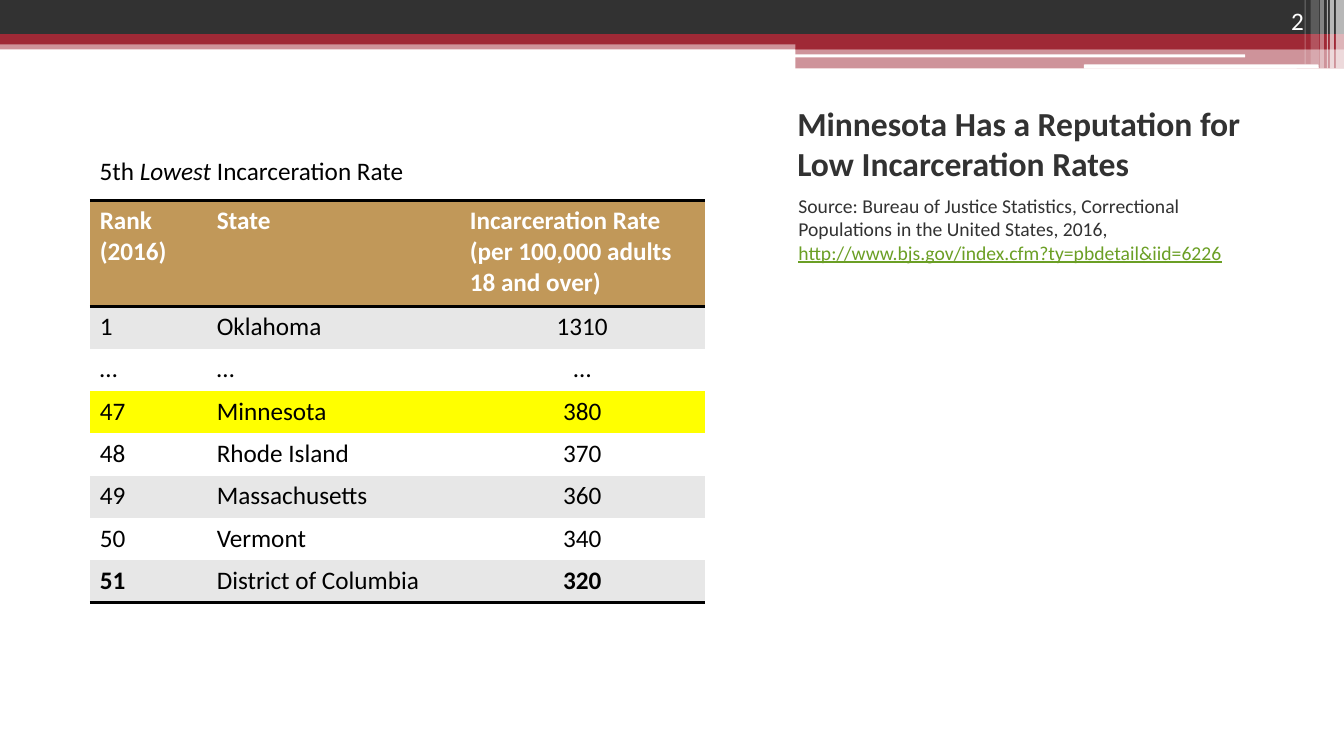
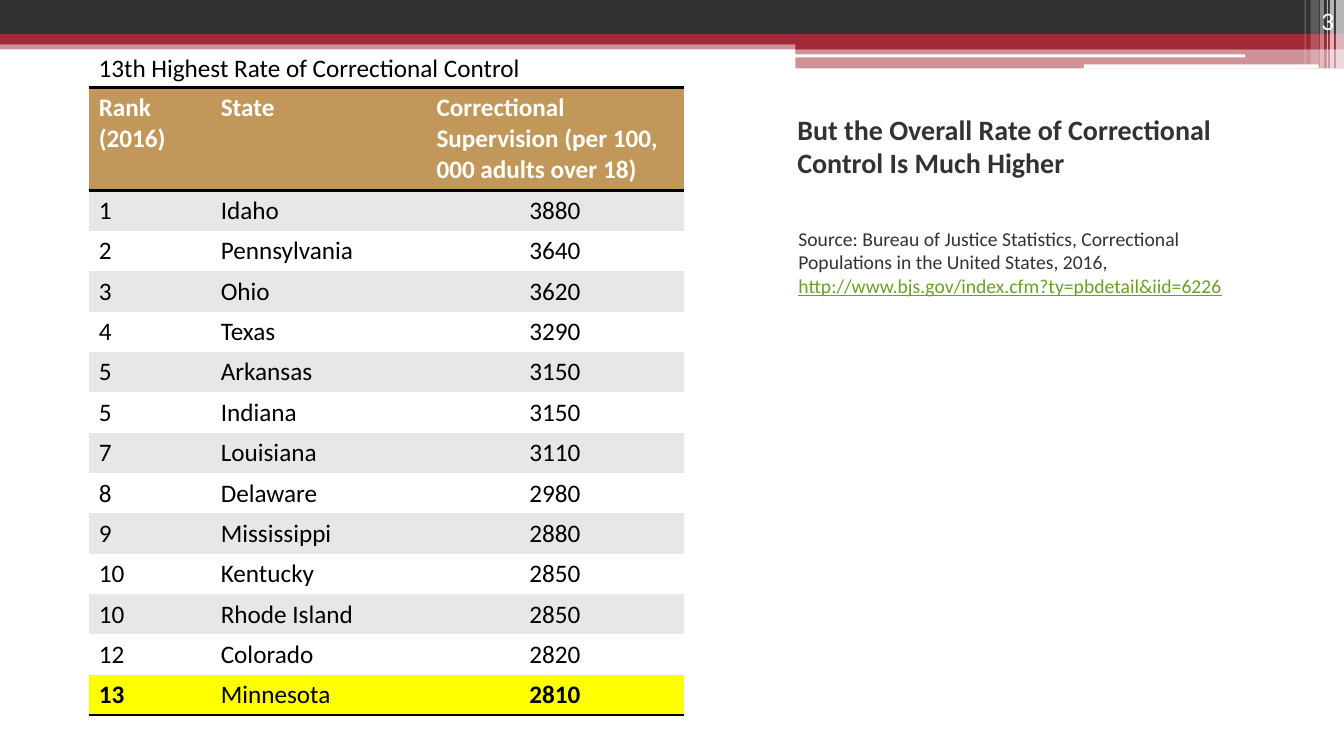
from dataclasses import dataclass

from lxml import etree
from pptx import Presentation
from pptx.dml.color import RGBColor
from pptx.enum import shapes, text
from pptx.oxml import ns
from pptx.util import Inches, Pt


@dataclass(frozen=True)
class Theme:
    font: str = "Calibri"
    dark: str = "323232"
    red: str = "9F2936"
    white: str = "FFFFFF"
    black: str = "000000"
    header: str = "C19859"
    band: str = "E7E7E7"
    highlight: str = "FFFF00"
    link: str = "6B9F25"
    body_size: int = 18
    source_size: int = 14
    rule_width: int = 2


THEME = Theme()
PLAIN_TABLE = "{2D5ABB26-0587-4C30-8999-92F81FD0307C}"
RECT = shapes.MSO_SHAPE.RECTANGLE
ROUND = shapes.MSO_SHAPE.ROUNDED_RECTANGLE
RIGHT = text.PP_ALIGN.RIGHT
BOTTOM = text.MSO_ANCHOR.BOTTOM

# Content: a span is its words and the font settings it changes
SOURCE = [
    ("Source: Bureau of Justice Statistics, Correctional Populations in the United States, 2016, ", {}),
    ("http://www.bjs.gov/index.cfm?ty=pbdetail&iid=6226", {"color": THEME.link, "underline": True}),
]
SLIDES = [
    {
        "number": "2", "number_left": 11.92,
        "title": "Minnesota Has a Reputation for Low Incarceration Rates",
        "title_top": 0.91, "title_size": 24, "source_top": 1.87,
        "caption": [("5th ", {}), ("Lowest", {"italic": True}), (" Incarceration Rate", {})],
        "caption_top": 1.49,
        "table_at": (0.89, 1.99), "columns": (1.16, 2.51, 2.43),
        "header_height": 1.05, "row_height": 0.42,
        "header": ("Rank\n(2016)", "State", "Incarceration Rate (per 100,000 adults 18 and over)"),
        "rows": [
            ("1", "Oklahoma", "1310"),
            ("…", "…", "…"),
            ("47", "Minnesota", "380"),
            ("48", "Rhode Island", "370"),
            ("49", "Massachusetts", "360"),
            ("50", "Vermont", "340"),
            ("51", "District of Columbia", "320"),
        ],
    },
    {
        "number": "3", "number_left": 12.22,
        "title": "But the Overall Rate of Correctional Control Is Much Higher",
        "title_top": 0.87, "title_size": 20, "source_top": 2.2,
        "caption": [("13th Highest Rate of Correctional Control", {})],
        "caption_top": 0.47,
        "table_at": (0.88, 0.87), "columns": (1.21, 2.14, 2.55),
        "header_height": 1.02, "row_height": 0.4,
        "header": ("Rank (2016)", "State", "Correctional Supervision (per 100, 000 adults over 18)"),
        "rows": [
            ("1", "Idaho", "3880"),
            ("2", "Pennsylvania", "3640"),
            ("3", "Ohio", "3620"),
            ("4", "Texas", "3290"),
            ("5", "Arkansas", "3150"),
            ("5", "Indiana", "3150"),
            ("7", "Louisiana", "3110"),
            ("8", "Delaware", "2980"),
            ("9", "Mississippi", "2880"),
            ("10", "Kentucky", "2850"),
            ("10", "Rhode Island", "2850"),
            ("12", "Colorado", "2820"),
            ("13", "Minnesota", "2810"),
        ],
    },
]

# Bands shared by all slides: preset, left, top, width, height, colour, opacity in percent
BANDS = [
    (RECT, 0, 0.4, 13.33, 0.09, THEME.red, 50),
    (RECT, 0, 0, 13.33, 0.34, THEME.dark, 100),
    (RECT, 0, 0.34, 13.33, 0.1, THEME.red, 100),
    (RECT, 7.89, 0.39, 5.44, 0.1, THEME.red, 100),
    (RECT, 7.89, 0.48, 5.44, 0.2, THEME.red, 50),
    (ROUND, 7.88, 0.54, 4.47, 0.03, THEME.white, 100),
    (ROUND, 10.75, 0.64, 2.33, 0.04, THEME.white, 100),
    (RECT, 13.25, 0, 0.08, 0.68, THEME.white, 65),
    (RECT, 13.19, 0, 0.04, 0.68, THEME.white, 65),
    (RECT, 13.16, 0, 0.01, 0.68, THEME.white, 60),
    (RECT, 13.09, 0, 0.04, 0.68, THEME.white, 40),
    (RECT, 13, 0, 0.08, 0.64, THEME.white, 20),
    (RECT, 12.94, 0, 0.01, 0.64, THEME.white, 30),
]


def rgb(value):
    return RGBColor.from_string(value)


def set_font(font, size, color, bold=False):
    font.name = THEME.font
    font.size = Pt(size)
    font.bold = bold
    font.color.rgb = rgb(color)


def add_bands(page):
    for preset, left, top, width, height, color, opacity in BANDS:
        band = page.shapes.add_shape(preset, Inches(left), Inches(top), Inches(width), Inches(height))
        band.shadow.inherit = False
        band.line.fill.background()
        band.fill.solid()
        band.fill.fore_color.rgb = rgb(color)
        if opacity < 100:
            color_node = band.fill._xPr.find(".//" + ns.qn("a:srgbClr"))
            etree.SubElement(color_node, ns.qn("a:alpha"), val=str(opacity * 1000))


def add_text(page, spans, left, top, width, height, size, color, bold=False, anchor=None, align=None):
    box = page.shapes.add_textbox(Inches(left), Inches(top), Inches(width), Inches(height))
    frame = box.text_frame
    frame.word_wrap = True
    frame.vertical_anchor = anchor
    para = frame.paragraphs[0]
    para.alignment = align
    set_font(para.font, size, color, bold)
    for words, changes in spans:
        span = para.add_run()
        span.text = words
        set_font(span.font, size, changes.get("color", color), bold)
        span.font.italic = changes.get("italic")
        span.font.underline = changes.get("underline")
    return para


def add_border(cell, side):
    properties = cell._tc.get_or_add_tcPr()
    line = etree.SubElement(properties, ns.qn("a:" + side), w=str(Pt(THEME.rule_width)))
    fill = etree.SubElement(line, ns.qn("a:solidFill"))
    etree.SubElement(fill, ns.qn("a:srgbClr"), val=THEME.black)


def fill_cell(cell, words, fill, color, bold, align, borders):
    for side in borders:
        add_border(cell, side)
    cell.fill.solid()
    cell.fill.fore_color.rgb = rgb(fill)
    cell.text = words
    for para in cell.text_frame.paragraphs:
        para.alignment = align
        for span in para.runs:
            set_font(span.font, THEME.body_size, color, bold)


def add_rate_table(page, content):
    rows = [content["header"], *content["rows"]]
    columns = content["columns"]
    heights = [content["header_height"]] + [content["row_height"]] * len(content["rows"])
    left, top = content["table_at"]
    frame = page.shapes.add_table(len(rows), len(columns), Inches(left), Inches(top),
                                  Inches(sum(columns)), Inches(sum(heights)))
    table = frame.table
    table.first_row = table.horz_banding = False
    table._tbl.tblPr.find(ns.qn("a:tableStyleId")).text = PLAIN_TABLE
    for column, width in zip(table.columns, columns):
        column.width = Inches(width)

    last = len(rows) - 1
    for r, (row, height) in enumerate(zip(rows, heights)):
        table.rows[r].height = Inches(height)
        is_header = r == 0
        if is_header:
            fill, borders = THEME.header, ("lnT", "lnB")
        else:
            fill = THEME.band if r % 2 else THEME.white
            borders = ("lnB",) if r == last else ()
        if "Minnesota" in row:
            fill = THEME.highlight
        for c, words in enumerate(row):
            is_rate = c == 2 and not is_header
            fill_cell(table.cell(r, c), words, fill,
                      color=THEME.white if is_header else THEME.black,
                      bold=is_header or (r == last and c != 1),
                      align=text.PP_ALIGN.CENTER if is_rate else None,
                      borders=borders)


def add_slide(deck, content):
    page = deck.slides.add_slide(deck.slide_layouts[6])
    add_bands(page)
    add_text(page, [(content["title"], {})], 7.81, content["title_top"], 4.93, 0.96,
             content["title_size"], THEME.dark, bold=True, anchor=BOTTOM)
    add_rate_table(page, content)
    source = add_text(page, SOURCE, 7.82, content["source_top"], 4.92, 5.01,
                      THEME.source_size, THEME.dark)
    source.space_before = Pt(3)
    add_text(page, [(content["number"], {})], content["number_left"], 0, 1.11, 0.4,
             THEME.body_size, THEME.white, anchor=BOTTOM, align=RIGHT)
    add_text(page, content["caption"], content["table_at"][0], content["caption_top"], 6.1, 0.71,
             THEME.body_size, THEME.black)


def main():
    deck = Presentation()
    deck.slide_width, deck.slide_height = Inches(13.33), Inches(7.5)
    for content in SLIDES:
        add_slide(deck, content)
    deck.save("out.pptx")


if __name__ == "__main__":
    main()
